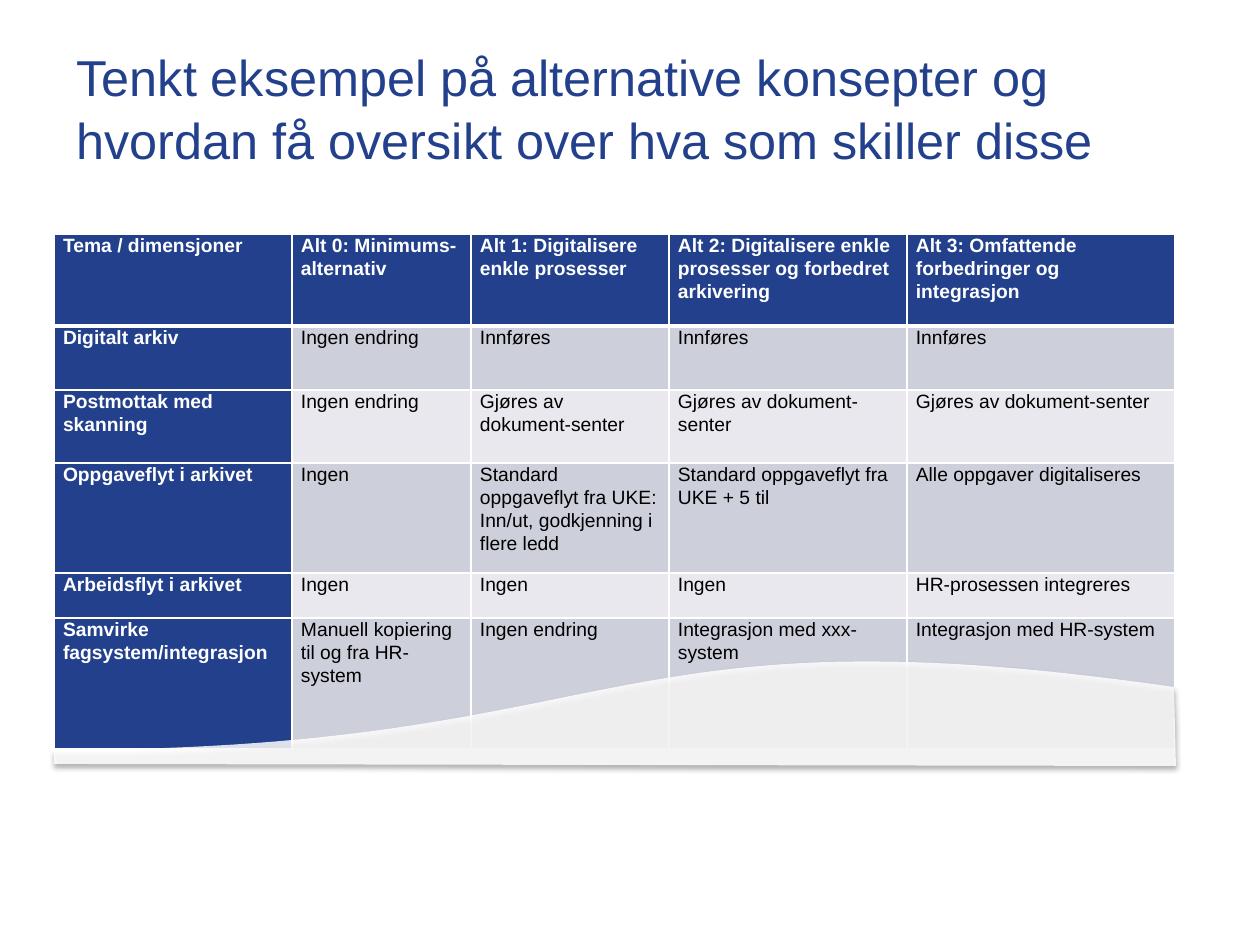
from lxml import etree
from pptx import Presentation
from pptx.dml.color import RGBColor
from pptx.enum.text import MSO_ANCHOR, MSO_AUTO_SIZE, PP_ALIGN
from pptx.oxml.ns import qn
from pptx.util import Emu, Pt

TOP = MSO_ANCHOR.TOP
LEFT = PP_ALIGN.LEFT
NO_AUTOFIT = MSO_AUTO_SIZE.NONE

EMU_PER_PX = 914400 // 126
POINT = 12700
TITLE_ONLY = 5

NAVY, WHITE, BLACK = "22408C", "FFFFFF", "000000"
BANDS = ["CDCFDA", "E8E8EE"]

COLUMN_WIDTHS = [238, 179, 198, 238, 268]
ROW_HEIGHTS = [92, 64, 73, 110, 45, 131]
ROWS = [
    ["Tema / dimensjoner", "Alt 0: Minimums-alternativ",
     "Alt 1: Digitalisere enkle prosesser",
     "Alt 2: Digitalisere enkle prosesser og forbedret arkivering",
     "Alt 3: Omfattende forbedringer og integrasjon"],
    ["Digitalt arkiv", "Ingen endring", "Innføres", "Innføres", "Innføres"],
    ["Postmottak med skanning", "Ingen endring", "Gjøres av dokument-senter",
     "Gjøres av dokument-senter", "Gjøres av dokument-senter"],
    ["Oppgaveflyt i arkivet", "Ingen",
     "Standard oppgaveflyt fra UKE: Inn/ut, godkjenning i flere ledd",
     "Standard oppgaveflyt fra UKE + 5 til", "Alle oppgaver digitaliseres"],
    ["Arbeidsflyt i arkivet", "Ingen", "Ingen", "Ingen", "HR-prosessen integreres"],
    ["Samvirke fagsystem/integrasjon", "Manuell kopiering til og fra HR-system",
     "Ingen endring", "Integrasjon med xxx-system", "Integrasjon med HR-system"],
]


def px(length):
    return Emu(length * EMU_PER_PX)


def color(value):
    return RGBColor.from_string(value)


def add_element(parent, tag, **attributes):
    element = etree.SubElement(parent, qn(tag))
    for name, value in attributes.items():
        element.set(name, str(value))
    return element


def bezier(start, control_1, control_2, end, steps=60):
    """Return points along a cubic curve, both ends included."""
    points = []
    for step in range(steps + 1):
        t = step / steps
        weights = [(1 - t) ** 3, 3 * t * (1 - t) ** 2, 3 * t ** 2 * (1 - t), t ** 3]
        corners = list(zip(start, control_1, control_2, end))
        points.append(tuple(sum(w * c for w, c in zip(weights, axis)) for axis in corners))
    return points


class SlideBuilder:
    font_name = "Arial"

    def __init__(self, presentation):
        self.slide = presentation.slides.add_slide(presentation.slide_layouts[TITLE_ONLY])

    def style(self, paragraph, size, font_color, bold=False, spacing=1.0):
        paragraph.alignment = LEFT
        paragraph.line_spacing = spacing
        font = paragraph.font
        font.name, font.size, font.bold = self.font_name, Pt(size), bold
        font.color.rgb = color(font_color)

    def title(self, text, left, top, width, height):
        shape = self.slide.shapes.title
        shape.left, shape.top, shape.width, shape.height = map(px, (left, top, width, height))
        frame = shape.text_frame
        frame.text = text
        frame.word_wrap = True
        frame.auto_size = NO_AUTOFIT
        frame.vertical_anchor = TOP
        frame.margin_top = px(7)
        self.style(frame.paragraphs[0], 28.8, NAVY, spacing=1.04)

    def table(self, rows, left, top, widths, heights):
        table = self.slide.shapes.add_table(
            len(rows), len(widths), px(left), px(top), px(sum(widths)), px(sum(heights))).table
        for column, width in zip(table.columns, widths):
            column.width = px(width)
        for row, height in zip(table.rows, heights):
            row.height = px(height)
        for row_index, row in enumerate(rows):
            for column_index, text in enumerate(row):
                self.cell(table.cell(row_index, column_index), text, row_index, column_index)

    def cell(self, cell, text, row_index, column_index):
        is_heading = row_index == 0 or column_index == 0
        cell.text = text
        cell.margin_left = cell.margin_right = px(9)
        cell.margin_top = cell.margin_bottom = 0
        cell.vertical_anchor = TOP
        self.style(cell.text_frame.paragraphs[0], 11, WHITE if is_heading else BLACK,
                   bold=is_heading, spacing=1.07)
        self.borders(cell, top=3 if row_index == 1 else 1, bottom=3 if row_index == 0 else 1)
        cell.fill.solid()
        cell.fill.fore_color.rgb = color(NAVY if is_heading else BANDS[(row_index - 1) % 2])

    def borders(self, cell, top, bottom):
        properties = cell._tc.get_or_add_tcPr()
        for side, width in (("L", 1), ("R", 1), ("T", top), ("B", bottom)):
            line = add_element(properties, f"a:ln{side}", w=width * POINT)
            add_element(add_element(line, "a:solidFill"), "a:srgbClr", val=WHITE)

    def wave(self, points, opacity):
        """Draw a translucent white outline with a soft shadow below it."""
        corners = [(round(x * EMU_PER_PX), round(y * EMU_PER_PX)) for x, y in points]
        builder = self.slide.shapes.build_freeform(*corners[0])
        builder.add_line_segments(corners[1:], close=True)
        shape = builder.convert_to_shape()
        shape.fill.solid()
        shape.fill.fore_color.rgb = color(WHITE)
        shape.line.fill.background()
        shape.shadow.inherit = False
        properties = shape._element.spPr
        fill_color = properties.find(qn("a:solidFill")).find(qn("a:srgbClr"))
        add_element(fill_color, "a:alpha", val=opacity * 1000)
        shadow = add_element(properties.find(qn("a:effectLst")), "a:outerShdw",
                             blurRad=round(3.1 * POINT), dist=round(1.8 * POINT),
                             dir=90 * 60000, algn="ctr", rotWithShape=0)
        add_element(add_element(shadow, "a:srgbClr", val=BLACK), "a:alpha", val=35000)


def main():
    presentation = Presentation()
    presentation.slide_width, presentation.slide_height = px(1260), px(945)
    builder = SlideBuilder(presentation)
    builder.title("Tenkt eksempel på alternative konsepter og hvordan få oversikt "
                  "over hva som skiller disse", 64, 37, 1134, 120)
    builder.table(ROWS, 54, 234, COLUMN_WIDTHS, ROW_HEIGHTS)
    crest = bezier((54, 750), (631, 750), (597, 604), (1174, 687))
    builder.wave([(1176, 766), (54, 764)] + crest, opacity=85)
    presentation.save("out.pptx")


if __name__ == "__main__":
    main()
